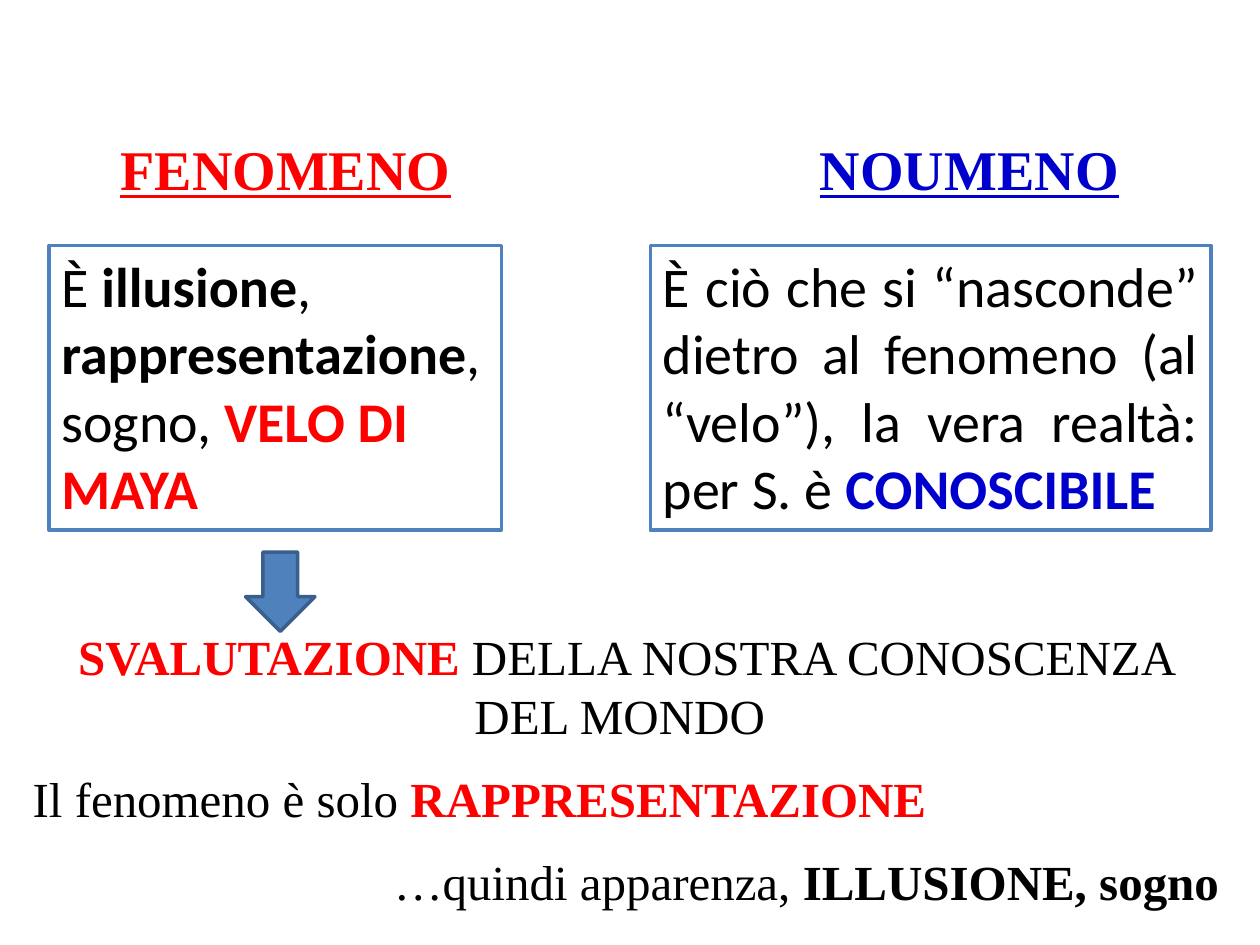
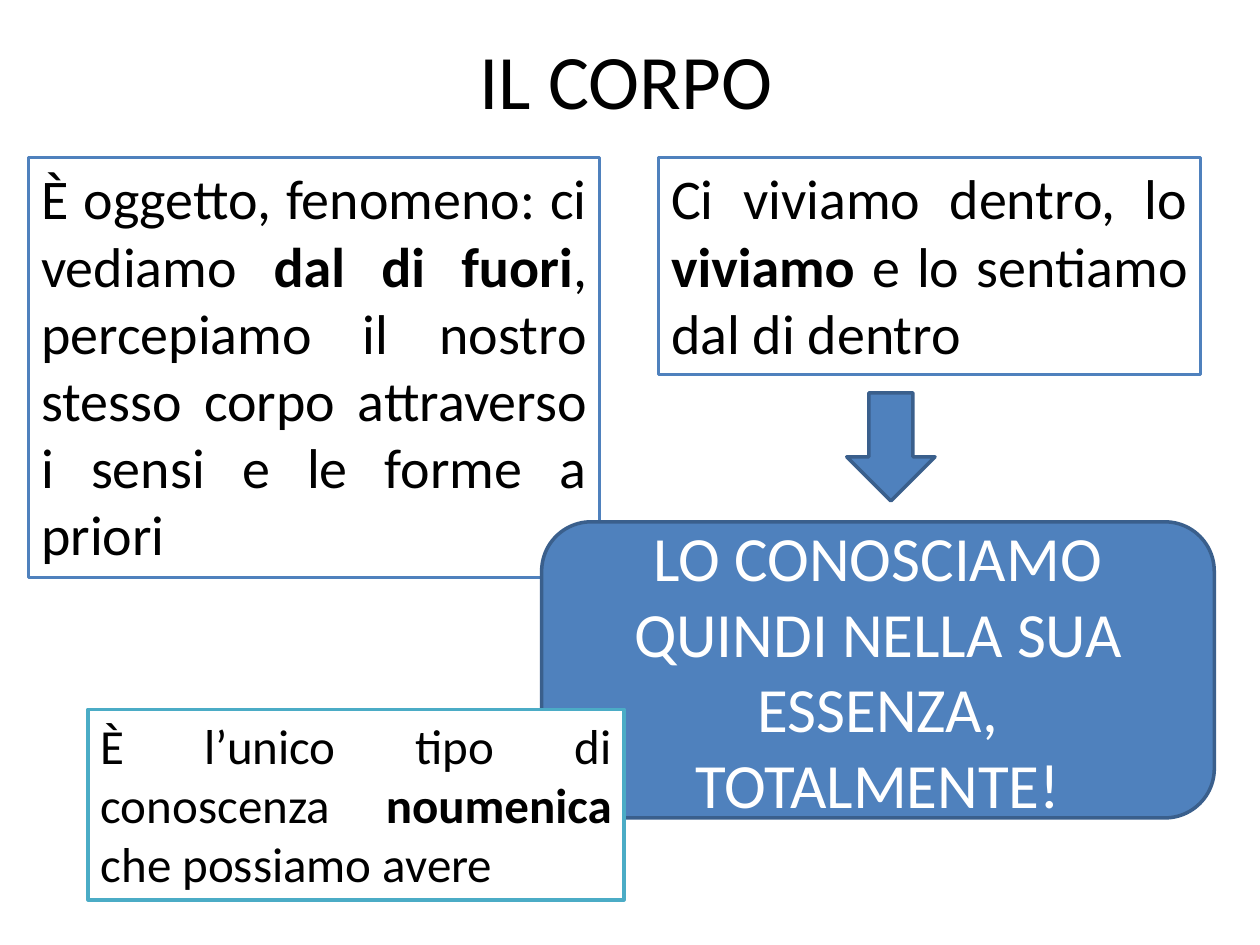
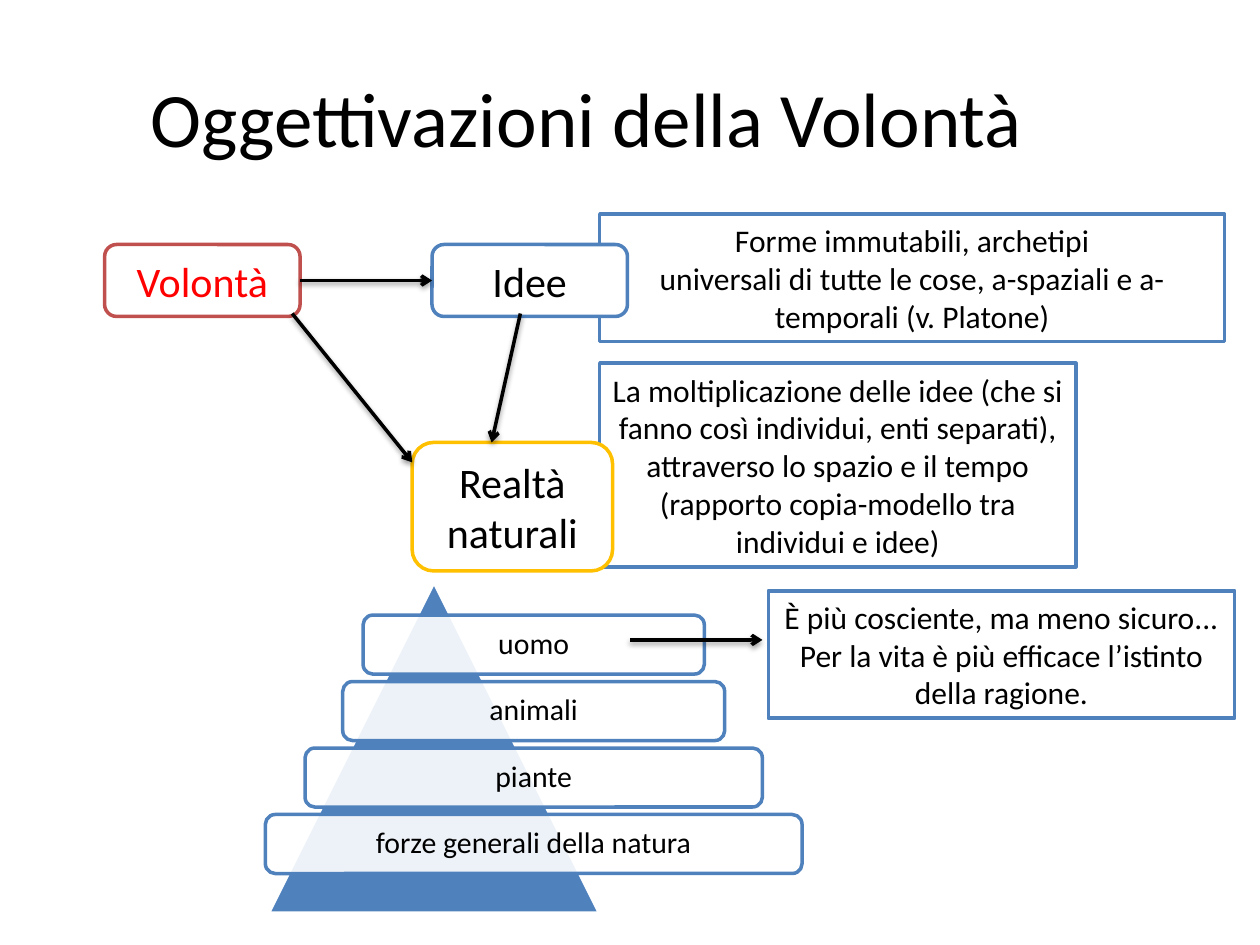
from dataclasses import dataclass
from typing import NamedTuple, Optional

from lxml.etree import SubElement
from pptx import Presentation
from pptx.dml.color import RGBColor
from pptx.enum.shapes import MSO_CONNECTOR, MSO_SHAPE
from pptx.enum.text import MSO_ANCHOR, MSO_AUTO_SIZE, PP_ALIGN
from pptx.oxml.ns import qn
from pptx.shapes.autoshape import Shape
from pptx.shapes.connector import Connector
from pptx.slide import Slide
from pptx.util import Cm, Pt

BLACK = RGBColor(0x00, 0x00, 0x00)
WHITE = RGBColor(0xFF, 0xFF, 0xFF)
RED = RGBColor(0xFF, 0x00, 0x00)
NOUMENON_BLUE = RGBColor(0x00, 0x00, 0xCC)
BLUE = RGBColor(0x4F, 0x81, 0xBD)
DARK_BLUE = RGBColor(0x3A, 0x5F, 0x8C)
TEAL = RGBColor(0x4B, 0xAC, 0xC6)
BRICK = RGBColor(0xC0, 0x50, 0x4D)
GOLD = RGBColor(0xFF, 0xC0, 0x00)

SANS = "Calibri"
SERIF = "Times New Roman"
LINE_WIDTH = Pt(2)
TITLE_ONLY, BLANK = 5, 6


class Area(NamedTuple):
    """Left, top, width and height in centimetres."""
    left: float
    top: float
    width: float
    height: float

    def lengths(self) -> list[Cm]:
        return [Cm(value) for value in self]


class Span(NamedTuple):
    text: str
    bold: bool = False
    color: Optional[RGBColor] = None
    underline: bool = False


class Line(NamedTuple):
    """One paragraph."""
    spans: list[Span]
    align: PP_ALIGN = PP_ALIGN.LEFT


@dataclass
class Box:
    area: Area
    lines: list[Line]
    size: int = 32
    font: str = SANS
    color: RGBColor = BLACK
    outline: Optional[RGBColor] = BLUE
    fill: RGBColor = WHITE
    form: MSO_SHAPE = MSO_SHAPE.RECTANGLE
    anchor: MSO_ANCHOR = MSO_ANCHOR.TOP
    grows: bool = True
    inset: Optional[float] = None
    line_spacing: Optional[float] = None


def justified(*spans: Span) -> list[Line]:
    return [Line(list(spans), PP_ALIGN.JUSTIFY)]


def centered(text: str) -> list[Line]:
    return [Line([Span(text)], PP_ALIGN.CENTER)]


def write(shape: Shape, box: Box) -> None:
    frame = shape.text_frame
    frame.word_wrap = True
    frame.vertical_anchor = box.anchor
    frame.auto_size = MSO_AUTO_SIZE.SHAPE_TO_FIT_TEXT if box.grows else MSO_AUTO_SIZE.NONE
    if box.inset is not None:
        frame.margin_left = frame.margin_right = Cm(box.inset)
        frame.margin_top = frame.margin_bottom = Cm(box.inset)
    for index, line in enumerate(box.lines):
        paragraph = frame.add_paragraph() if index else frame.paragraphs[0]
        paragraph.alignment = line.align
        if index:
            paragraph.space_before = Pt(box.size / 2)
        if box.line_spacing:
            paragraph.line_spacing = box.line_spacing
        for span in line.spans:
            for row, text in enumerate(span.text.split("\n")):
                if row:
                    paragraph.add_line_break()
                run = paragraph.add_run()
                run.text = text
                run.font.name = box.font
                run.font.size = Pt(box.size)
                run.font.bold = span.bold
                run.font.underline = span.underline
                run.font.color.rgb = span.color or box.color


def add_solid(slide: Slide, form: MSO_SHAPE, area: Area,
              fill: RGBColor, outline: RGBColor) -> Shape:
    shape = slide.shapes.add_shape(form, *area.lengths())
    shape.shadow.inherit = False
    shape.fill.solid()
    shape.fill.fore_color.rgb = fill
    shape.line.color.rgb = outline
    shape.line.width = LINE_WIDTH
    return shape


def add_box(slide: Slide, box: Box) -> Shape:
    """Draw a framed box, or a plain text box when there is no outline."""
    if box.outline is None:
        shape = slide.shapes.add_textbox(*box.area.lengths())
    else:
        shape = add_solid(slide, box.form, box.area, box.fill, box.outline)
    write(shape, box)
    return shape


def add_down_arrow(slide: Slide, area: Area) -> None:
    add_solid(slide, MSO_SHAPE.DOWN_ARROW, area, BLUE, DARK_BLUE)


def add_title(slide: Slide, text: str, area: Area) -> None:
    title = slide.shapes.title
    title.left, title.top, title.width, title.height = area.lengths()
    title.text_frame.text = text
    title.text_frame.vertical_anchor = MSO_ANCHOR.MIDDLE
    paragraph = title.text_frame.paragraphs[0]
    paragraph.alignment = PP_ALIGN.CENTER
    font = paragraph.runs[0].font
    font.name, font.size, font.color.rgb = SANS, Pt(44), BLACK


def set_opacity(shape: Shape, percent: int) -> None:
    fill_color = shape.element.spPr.find(qn("a:solidFill")).find(qn("a:srgbClr"))
    SubElement(fill_color, qn("a:alpha"), val=str(percent * 1000))


def add_arrow(slide: Slide, x1: float, y1: float, x2: float, y2: float) -> Connector:
    """Draw a black arrow with a soft shadow below it."""
    arrow = slide.shapes.add_connector(
        MSO_CONNECTOR.STRAIGHT, Cm(x1), Cm(y1), Cm(x2), Cm(y2))
    arrow.line.color.rgb = BLACK
    arrow.line.width = LINE_WIDTH
    SubElement(arrow.line._get_or_add_ln(), qn("a:tailEnd"), type="arrow")
    effects = SubElement(arrow.element.spPr, qn("a:effectLst"))
    shadow = SubElement(effects, qn("a:outerShdw"), blurRad=str(Pt(3.1)),
                        dist=str(Pt(1.6)), dir="5400000", rotWithShape="0")
    shadow_color = SubElement(shadow, qn("a:srgbClr"), val=str(BLACK))
    SubElement(shadow_color, qn("a:alpha"), val="38000")
    return arrow


def build_phenomenon_and_noumenon(slide: Slide) -> None:
    boxes = [
        Box(Area(0.99, 4.95, 9.12, 5.74), [Line([
            Span("È "), Span("illusione", True), Span(", "),
            Span("rappresentazione", True), Span(", sogno, "),
            Span("VELO DI MAYA", True, RED)])]),
        Box(Area(13.11, 4.95, 11.3, 5.74), justified(
            Span("È ciò che si “nasconde” dietro al fenomeno (al “velo”), "
                 "la vera realtà: per S. è "),
            Span("CONOSCIBILE", True, NOUMENON_BLUE))),
        Box(Area(0.41, 12.5, 24.41, 6.25), [
            Line([Span("SVALUTAZIONE", True, RED),
                  Span(" DELLA NOSTRA CONOSCENZA DEL MONDO ")], PP_ALIGN.CENTER),
            Line([Span("Il fenomeno è solo "),
                  Span("RAPPRESENTAZIONE ", True, RED)], PP_ALIGN.JUSTIFY),
            Line([Span("…quindi apparenza, "),
                  Span("ILLUSIONE, sogno", True)], PP_ALIGN.RIGHT),
        ], size=28, font=SERIF, outline=None),
        Box(Area(2.18, 2.59, 7.54, 1.63), justified(Span("FENOMENO", True, RED, True)),
            font=SERIF, outline=None),
        Box(Area(16.28, 2.59, 6.81, 1.63),
            justified(Span("NOUMENO", True, NOUMENON_BLUE, True)),
            font=SERIF, outline=None),
    ]
    for box in boxes:
        add_box(slide, box)
    add_down_arrow(slide, Area(4.95, 11.13, 1.4, 1.6))


def build_body(slide: Slide) -> None:
    add_title(slide, "IL CORPO", Area(1.19, 0, 22.86, 3.18))
    boxes = [
        Box(Area(0.58, 3.18, 11.51, 8.46), justified(
            Span("È oggetto, fenomeno: ci vediamo "), Span("dal di fuori", True),
            Span(", percepiamo il nostro stesso corpo attraverso i sensi "
                 "e le forme a priori"))),
        Box(Area(13.28, 3.18, 10.92, 4.37), justified(
            Span("Ci viviamo dentro, lo "), Span("viviamo", True),
            Span(" e lo sentiamo dal di dentro"))),
        Box(Area(10.92, 10.52, 13.56, 5.97),
            centered("LO CONOSCIAMO QUINDI NELLA SUA ESSENZA, TOTALMENTE!"),
            size=36, color=WHITE, outline=DARK_BLUE, fill=BLUE,
            form=MSO_SHAPE.ROUNDED_RECTANGLE, anchor=MSO_ANCHOR.MIDDLE, grows=False),
        Box(Area(1.78, 14.3, 10.8, 3.84), justified(
            Span("È l’unico tipo di conoscenza "), Span("noumenica", True),
            Span(" che possiamo avere")), size=28, outline=TEAL),
    ]
    for box in boxes:
        add_box(slide, box)
    add_down_arrow(slide, Area(17.07, 7.92, 1.78, 2.18))


def add_note(slide: Slide, text: str, area: Area) -> None:
    add_box(slide, Box(area, centered(text), size=18, anchor=MSO_ANCHOR.MIDDLE))


def add_concept(slide: Slide, text: str, area: Area, outline: RGBColor,
                color: RGBColor = BLACK) -> Shape:
    return add_box(slide, Box(
        area, centered(text), size=24, color=color, outline=outline,
        form=MSO_SHAPE.ROUNDED_RECTANGLE, anchor=MSO_ANCHOR.MIDDLE))


def add_pyramid(slide: Slide) -> None:
    """Draw the triangle and the centred levels of nature over it."""
    add_solid(slide, MSO_SHAPE.ISOSCELES_TRIANGLE,
              Area(5.41, 11.73, 6.68, 6.68), BLUE, WHITE)
    center, top, pitch, height = 10.76, 12.4, 1.34, 1.19
    levels = {"uomo": 6.88, "animali": 7.7, "piante": 9.22,
              "forze generali della natura": 10.82}
    for index, (name, width) in enumerate(levels.items()):
        area = Area(center - width / 2, top + index * pitch, width, height)
        level = add_box(slide, Box(
            area, centered(name), size=17, form=MSO_SHAPE.ROUNDED_RECTANGLE,
            anchor=MSO_ANCHOR.MIDDLE, grows=False, inset=0.18, line_spacing=0.9))
        set_opacity(level, 90)


def build_objectifications(slide: Slide) -> None:
    add_title(slide, "Oggettivazioni della Volontà", Area(2.54, 0.76, 18.57, 3.18))
    add_note(slide, "La moltiplicazione delle idee (che si fanno così individui, "
             "enti separati), attraverso lo spazio e il tempo (rapporto "
             "copia-modello tra individui e idee)", Area(12.09, 7.32, 9.6, 4.11))
    add_note(slide, "Forme immutabili, archetipi\nuniversali di tutte le cose, "
             "a-spaziali e a-temporali (v. Platone)", Area(12.09, 4.32, 12.6, 2.57))

    will = add_concept(slide, "Volontà", Area(2.11, 4.93, 3.94, 1.45), BRICK, RED)
    ideas = add_concept(slide, "Idee", Area(8.71, 4.93, 3.94, 1.45), BLUE)
    add_concept(slide, "Realtà naturali", Area(8.31, 8.92, 4.04, 2.59), GOLD)

    will_to_ideas = add_arrow(slide, 6.05, 5.66, 8.71, 5.66)
    will_to_ideas.begin_connect(will, 3)
    will_to_ideas.end_connect(ideas, 1)
    add_arrow(slide, 5.89, 6.32, 8.31, 9.32)
    add_arrow(slide, 10.49, 6.32, 9.91, 8.92)

    add_pyramid(slide)
    add_note(slide, "È più cosciente, ma meno sicuro... Per la vita è più efficace "
             "l’istinto della ragione.", Area(15.49, 11.91, 9.4, 2.57))
    add_arrow(slide, 12.7, 12.9, 15.37, 12.9)


def main() -> None:
    presentation = Presentation()
    presentation.slide_width, presentation.slide_height = Cm(25.4), Cm(19.05)
    for layout, build in (
        (BLANK, build_phenomenon_and_noumenon),
        (TITLE_ONLY, build_body),
        (TITLE_ONLY, build_objectifications),
    ):
        build(presentation.slides.add_slide(presentation.slide_layouts[layout]))
    presentation.save("out.pptx")


if __name__ == "__main__":
    main()
